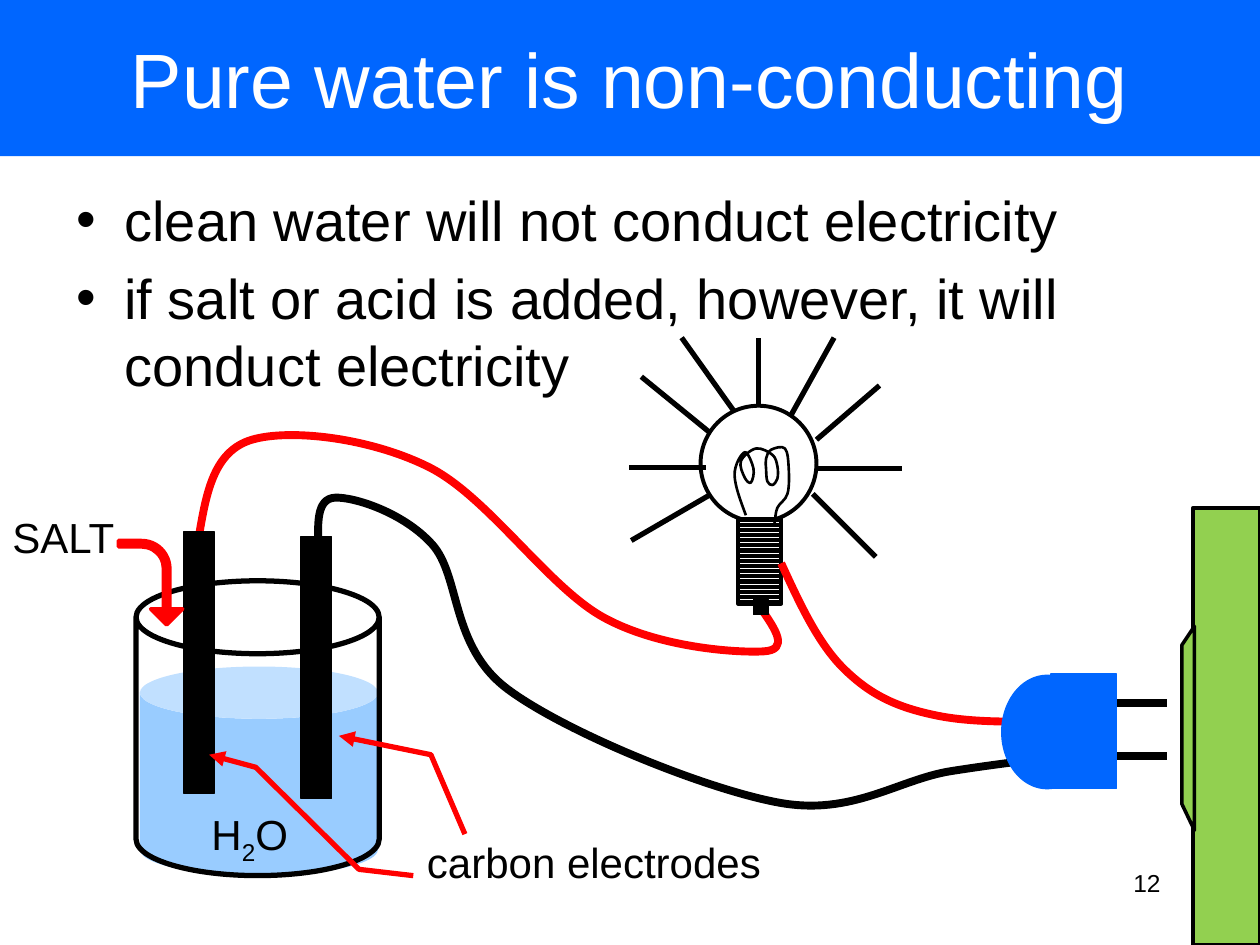
import dataclasses

import pptx
import pptx.dml.color
import pptx.enum.dml
import pptx.enum.shapes
import pptx.enum.text
import pptx.oxml.ns
import pptx.util
from lxml import etree

Cm = pptx.util.Cm
Pt = pptx.util.Pt
qn = pptx.oxml.ns.qn
RGB = pptx.dml.color.RGBColor.from_string
Shape = pptx.enum.shapes.MSO_SHAPE
Align = pptx.enum.text.PP_ALIGN
Anchor = pptx.enum.text.MSO_ANCHOR


@dataclasses.dataclass(frozen=True)
class Theme:
    font: str = "Arial"
    black: str = "000000"
    white: str = "FFFFFF"
    blue: str = "0066FF"
    water: str = "99CCFF"
    red: str = "FF0000"
    green: str = "92D050"
    title: int = 44
    body: int = 32
    label: int = 24
    number: int = 14


theme = Theme()
unit = 2.54
width, height = 10, 7.5

styles = {
    "banner": {"fill": theme.blue},
    "water": {"fill": theme.water},
    "beaker": {"line": theme.black, "weight": 3},
    "carbon": {"fill": theme.black, "line": theme.black, "weight": 0.75},
    "glass": {"fill": theme.white, "line": theme.black, "weight": 2.25},
    "thread": {"fill": "stripes", "line": theme.black, "weight": 2.25},
    "filament": {"line": theme.black, "weight": 1.5},
    "ray": {"line": theme.black, "weight": 3},
    "red wire": {"line": theme.red, "weight": 4.5},
    "black wire": {"line": theme.black, "weight": 4.5},
    "plug": {"fill": theme.blue, "line": theme.blue, "weight": 0.75},
    "pointer": {"line": theme.red, "weight": 3, "arrowhead": True},
    "salt": {"fill": theme.red, "line": theme.red, "weight": 2},
    "wall": {"fill": theme.green, "line": theme.black, "weight": 2.25},
    "socket": {"fill": theme.green, "line": theme.black, "weight": 2},
}

deck = pptx.Presentation()
deck.slide_width, deck.slide_height = Cm(width * unit), Cm(height * unit)
page = deck.slides.add_slide(deck.slide_layouts[6])


def smooth(anchors):
    middle = list(zip(anchors, anchors[1:], anchors[2:]))
    slopes = [((after[0] - before[0]) / 6, (after[1] - before[1]) / 6) for before, _, after in middle]
    arriving = [(x - dx, y - dy) for (_, (x, y), _), (dx, dy) in zip(middle, slopes)]
    leaving = [(x + dx, y + dy) for (_, (x, y), _), (dx, dy) in zip(middle, slopes)]
    first = [(a + b) / 2 for a, b in zip(anchors[0], arriving[0])]
    last = [(a + b) / 2 for a, b in zip(anchors[-1], leaving[-1])]
    points = [anchors[0]]
    for stretch in zip([first] + leaving, arriving + [last], anchors[1:]):
        points.extend(stretch)
    return points


def draw(kind, geometry, style, adjustments=(), rotation=0):
    look = styles[style]
    if kind == "line":
        lengths = [Cm(value * unit) for point in geometry for value in point]
        item = page.shapes.add_connector(pptx.enum.shapes.MSO_CONNECTOR.STRAIGHT, *lengths)
        etree.SubElement(item._element.spPr, qn("a:effectLst"))
    elif kind in ("curve", "open", "closed"):
        corners = smooth(geometry) if kind == "curve" else geometry
        points = [(Cm(x * unit), Cm(y * unit)) for x, y in corners]
        builder = page.shapes.build_freeform(*points[0], scale=1.0)
        builder.add_line_segments(points[1:], close=kind == "closed")
        item = builder.convert_to_shape()
    else:
        item = page.shapes.add_shape(kind, *[Cm(value * unit) for value in geometry])
        item.rotation = rotation
        for index, value in enumerate(adjustments):
            item.adjustments[index] = value
    if kind == "curve":
        steps = list(item._element.iter(qn("a:lnTo")))
        for bend, *others in zip(steps[::3], steps[1::3], steps[2::3]):
            bend.tag = qn("a:cubicBezTo")
            for step in others:
                bend.append(step[0])
                step.getparent().remove(step)
    if kind != "line":
        item.shadow.inherit = False
        if look.get("fill") == "stripes":
            item.fill.patterned()
            item.fill.pattern = pptx.enum.dml.MSO_PATTERN.DARK_HORIZONTAL
            item.fill.back_color.rgb = RGB(theme.white)
            item.fill.fore_color.rgb = RGB(theme.black)
        elif "fill" in look:
            item.fill.solid()
            item.fill.fore_color.rgb = RGB(look["fill"])
        else:
            item.fill.background()
    if "line" in look:
        item.line.color.rgb = RGB(look["line"])
        item.line.width = Pt(look["weight"])
    else:
        item.line.fill.background()
    if "arrowhead" in look:
        etree.SubElement(item.line._get_or_add_ln(), qn("a:tailEnd"), type="triangle")


banner = (0, 0, width, 1.24)
rod_width, rod_height = 0.24, 2.08
left_rod, right_rod = (1.46, 4.22), (2.39, 4.26)
bulb_left, bulb_top, bulb_size = 5.56, 3.22, 0.92
thread_left, thread_right, thread_top, thread_bottom = 5.86, 6.2, 4.1, 4.79
prong_start, prong_end, prong_heights = 8.73, 9.26, (5.58, 6)
wall_left, wall_top = 9.47, 4.03
socket_left, socket_right = 9.38, 9.48

thread = [(thread_left, thread_top), (thread_left, thread_bottom),
          (thread_right, thread_bottom), (thread_right, thread_top)]
socket = [(socket_left, 5.12), (socket_right, 4.97), (socket_right, 6.59), (socket_left, 6.38)]

lamp_to_left_rod = [(6.04, 4.83), (6.06, 5.17), (4.79, 4.9), (3.41, 3.71), (2, 3.49), (1.58, 4.25)]
plug_to_lamp = [(8.68, 5.71), (7.44, 5.68), (6.7, 5.31), (thread_right, 4.47)]
right_rod_to_plug = [(2.53, 4.36), (2.66, 3.95), (3.43, 4.32), (4.03, 5.47),
                     (6.18, 6.37), (7.55, 6.12), (8.73, 5.97)]
left_loop = [(5.83, 3.77), (5.91, 3.59), (5.98, 3.72), (5.96, 3.83), (5.91, 3.79), (5.88, 3.66)]
right_loop = [(6, 3.56), (6.13, 3.61), (6.17, 3.7), (6.17, 3.8), (6.13, 3.85), (6.09, 3.82),
              (6.08, 3.72), (6.08, 3.64), (6.12, 3.57), (6.23, 3.56), (6.26, 3.72)]
filament = [(5.92, 4.09), *left_loop, *right_loop, (6.25, 3.92), (6.17, 4.03), (6.15, 4.14), (6.14, 4.18)]

rays = {
    "up": [(6.02, bulb_top), (6.02, 2.68)],
    "up right": [(6.27, 3.31), (6.62, 2.68)],
    "upper right": [(6.48, 3.49), (6.98, 3.06)],
    "right": [(6.48, 3.72), (7.16, 3.72)],
    "lower right": [(6.45, 3.92), (6.95, 4.42)],
    "lower left": [(5.63, 3.93), (5.01, 4.29)],
    "left": [(5.6, 3.71), (4.99, 3.71)],
    "upper left": [(5.63, 3.43), (5.09, 2.99)],
    "up left": [(5.83, 3.27), (5.41, 2.68)],
}
pointers = {
    "left rod": [(3.28, 6.95), (2.85, 6.9), (2.03, 6.09), (1.66, 5.99)],
    "right rod": [(3.69, 6.62), (3.42, 5.99), (2.69, 5.84)],
}

draw(Shape.RECTANGLE, banner, "banner")

draw("curve", lamp_to_left_rod, "red wire")
draw(Shape.CAN, (1.11, 5.29, 1.89, 1.66), "water", adjustments=[0.25])
for corner in (left_rod, right_rod):
    draw(Shape.RECTANGLE, (*corner, rod_width, rod_height), "carbon")

draw(Shape.OVAL, (bulb_left, bulb_top, bulb_size, bulb_size), "glass")
draw("open", thread, "thread")
draw(Shape.RECTANGLE, (5.98, 4.76, 0.12, 0.12), "carbon")
draw("curve", filament, "filament")
for ray in rays.values():
    draw("line", ray, "ray")

draw("curve", plug_to_lamp, "red wire")
draw("curve", right_rod_to_plug, "black wire")
for level in prong_heights:
    draw("line", [(prong_start, level), (prong_end, level)], "black wire")
draw(Shape.OVAL, (7.95, 5.36, 0.72, 0.9), "plug")
draw(Shape.RECTANGLE, (8.34, 5.35, 0.52, 0.91), "plug")

draw(Shape.CAN, (1.08, 4.61, 1.93, 2.34), "beaker", adjustments=[0.3])
for pointer in pointers.values():
    draw("open", pointer, "pointer")
draw(Shape.BENT_ARROW, (0.86, 4.37, 0.67, 0.51), "salt", adjustments=[0.1, 0.25, 0.25, 0.44], rotation=90)

draw(Shape.RECTANGLE, (wall_left, wall_top, width - wall_left, height - wall_top), "wall")
draw("closed", socket, "socket")

wrapped, unwrapped = {"word_wrap": True}, {"word_wrap": False}
centred = {"word_wrap": True, "vertical_anchor": Anchor.MIDDLE}
bullets = ["clean water will not conduct electricity",
           "if salt or acid is added, however, it will conduct electricity"]
texts = [
    (banner, ["Pure water is non-conducting"], theme.title, theme.white, centred, {"alignment": Align.CENTER}),
    ((0.51, 1.42, 9, 1.88), bullets, theme.body, theme.black, wrapped, {"space_before": Pt(6.5)}),
    ((1.58, 6.37, 0.82, 0.5), ["H|2|O"], theme.label, theme.black, unwrapped, {}),
    ((3.29, 6.59, 2.85, 0.5), ["carbon electrodes"], theme.label, theme.black, unwrapped, {}),
    ((0, 4.01, 1.02, 0.5), ["SALT"], theme.label, theme.black, unwrapped, {}),
    ((6.98, 6.84, 2.33, 0.52), ["12"], theme.number, theme.black, wrapped, {"alignment": Align.RIGHT}),
]
for place, lines, size, color, frame_format, para_format in texts:
    box = page.shapes.add_textbox(*[Cm(value * unit) for value in place])
    frame = box.text_frame
    for name, value in frame_format.items():
        setattr(frame, name, value)
    for index, line in enumerate(lines):
        para = frame.add_paragraph() if index else frame.paragraphs[0]
        for name, value in para_format.items():
            setattr(para, name, value)
        if lines is bullets:
            properties = para._p.get_or_add_pPr()
            indent = Cm(0.38 * unit)
            properties.set("marL", str(indent))
            properties.set("indent", str(-indent))
            etree.SubElement(properties, qn("a:buFont"), typeface=theme.font)
            etree.SubElement(properties, qn("a:buChar"), char="•")
        for position, piece in enumerate(line.split("|")):
            span = para.add_run()
            span.text = piece
            for name, value in {"name": theme.font, "size": Pt(size)}.items():
                setattr(span.font, name, value)
            span.font.color.rgb = RGB(color)
            if position == 1:
                span.font._element.set("baseline", "-25000")

deck.save("out.pptx")
